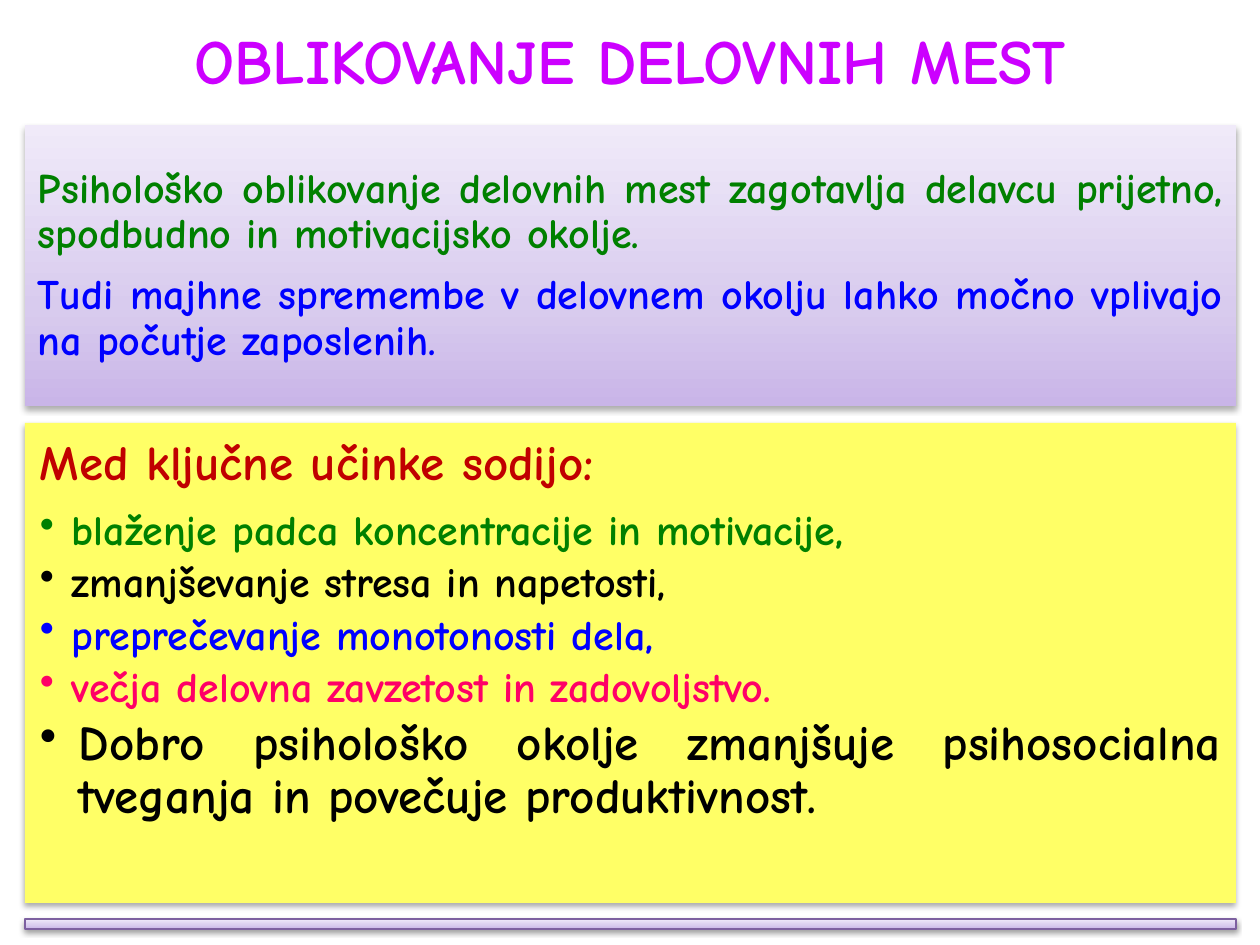
from dataclasses import dataclass

import pptx
import pptx.dml.color
import pptx.enum.shapes
import pptx.enum.text
import pptx.oxml
import pptx.oxml.ns
import pptx.util

RGBColor = pptx.dml.color.RGBColor
Align = pptx.enum.text.PP_ALIGN
Anchor = pptx.enum.text.MSO_ANCHOR

PX = 914400 / 126
FONT = "Comic Neue"
MAGENTA = RGBColor(0xCC, 0x00, 0xFF)
GREEN = RGBColor(0x00, 0x80, 0x00)
BLUE = RGBColor(0x00, 0x00, 0xFF)
DARK_RED = RGBColor(0xC0, 0x00, 0x00)
PINK = RGBColor(0xFF, 0x00, 0x66)
BLACK = RGBColor(0x00, 0x00, 0x00)
YELLOW = RGBColor(0xFF, 0xFF, 0x66)
PURPLE = RGBColor(0x7D, 0x60, 0xA0)
LILAC_STOPS = (
    (0, RGBColor(0xC9, 0xB5, 0xE8)),
    (35, RGBColor(0xD8, 0xCB, 0xEE)),
    (100, RGBColor(0xF0, 0xEA, 0xF9)),
)


@dataclass(frozen=True)
class Panel:
    top: int
    height: int
    fill: RGBColor | None = None  # None gives the lilac gradient
    line: RGBColor | None = None
    shadow_opacity: int = 32
    shadow_blur: float = 3.5
    shadow_distance: float = 2.2


@dataclass(frozen=True)
class Bullet:
    text: str
    color: RGBColor
    size: int = 24
    indent: int = 32
    align: Align = Align.LEFT


INTRODUCTION = Panel(125, 281)
EFFECTS = Panel(423, 480, fill=YELLOW)
FOOTER = Panel(919, 10, line=PURPLE, shadow_opacity=38,
               shadow_blur=3.1, shadow_distance=1.6)

BULLETS = (
    Bullet("blaženje padca koncentracije in motivacije,", GREEN),
    Bullet("zmanjševanje stresa in napetosti,", BLACK),
    Bullet("preprečevanje monotonosti dela,", BLUE),
    Bullet("večja delovna zavzetost in zadovoljstvo.", PINK),
    Bullet("Dobro psihološko okolje zmanjšuje psihosocialna tveganja "
           "in povečuje produktivnost.", BLACK, 28, 39, Align.JUSTIFY),
)


def px(length: int) -> int:
    return round(length * PX)


def xml(text: str):
    namespace = pptx.oxml.ns.nsdecls("a")
    return pptx.oxml.parse_xml(text.replace(" ", f" {namespace} ", 1))


def fill_gradient(shape) -> None:
    shape.fill.gradient()
    shape.fill.gradient_angle = 90
    stops = shape._element.spPr.find(".//" + pptx.oxml.ns.qn("a:gsLst"))
    for stop in list(stops):
        stops.remove(stop)
    for position, color in LILAC_STOPS:
        stops.append(xml(f'<a:gs pos="{position * 1000}">'
                         f'<a:srgbClr val="{color}"/></a:gs>'))


def draw_panel(slide, panel: Panel):
    shape = slide.shapes.add_shape(
        pptx.enum.shapes.MSO_SHAPE.RECTANGLE,
        px(25), px(panel.top), px(1211), px(panel.height))
    if panel.fill is None:
        fill_gradient(shape)
    else:
        shape.fill.solid()
        shape.fill.fore_color.rgb = panel.fill
    if panel.line is None:
        shape.line.fill.background()
    else:
        shape.line.color.rgb = panel.line
        shape.line.width = pptx.util.Pt(0.75)

    # Soft shadow falling straight down
    shape.shadow.inherit = False
    effects = shape._element.spPr.find(pptx.oxml.ns.qn("a:effectLst"))
    effects.append(xml(
        f'<a:outerShdw blurRad="{pptx.util.Pt(panel.shadow_blur)}" '
        f'dist="{pptx.util.Pt(panel.shadow_distance)}" dir="5400000" '
        f'rotWithShape="0"><a:srgbClr val="000000">'
        f'<a:alpha val="{panel.shadow_opacity * 1000}"/>'
        f'</a:srgbClr></a:outerShdw>'))
    return shape


def prepare_frame(shape, margin: int, anchor: Anchor):
    frame = shape.text_frame
    frame.word_wrap = True
    frame.vertical_anchor = anchor
    frame.margin_left = frame.margin_right = px(margin)
    frame.margin_top = frame.margin_bottom = px(margin)
    return frame


def write(frame, text: str, *, size: int, color: RGBColor,
          align: Align = Align.LEFT, line_spacing: float = 0.9,
          space_after: float = 0, indent: int = 0) -> None:
    """Add a paragraph; a positive indent gives it a hanging bullet."""
    first = frame.paragraphs[0]
    paragraph = frame.add_paragraph() if first.runs else first
    paragraph.alignment = align
    paragraph.line_spacing = line_spacing
    paragraph.space_after = pptx.util.Pt(space_after)
    if indent:
        properties = paragraph._p.get_or_add_pPr()
        properties.set("marL", str(px(indent)))
        properties.set("indent", str(-px(indent)))
        properties.append(xml('<a:buChar char="•"/>'))
    run = paragraph.add_run()
    run.text = text
    run.font.name = FONT
    run.font.size = pptx.util.Pt(size)
    run.font.bold = True
    run.font.color.rgb = color


def main() -> None:
    presentation = pptx.Presentation()
    presentation.slide_width = px(1260)
    presentation.slide_height = px(945)
    slide = presentation.slides.add_slide(presentation.slide_layouts[6])

    # Title
    title = slide.shapes.add_textbox(px(15), px(16), px(1230), px(100))
    write(prepare_frame(title, 6, Anchor.TOP), "OBLIKOVANJE DELOVNIH MEST",
          size=36, color=MAGENTA, align=Align.CENTER, line_spacing=1.0)

    # Introduction
    frame = prepare_frame(draw_panel(slide, INTRODUCTION), 13, Anchor.MIDDLE)
    for text, color in (
        ("Psihološko oblikovanje delovnih mest zagotavlja delavcu prijetno, "
         "spodbudno in motivacijsko okolje.", GREEN),
        ("Tudi majhne spremembe v delovnem okolju lahko močno vplivajo "
         "na počutje zaposlenih.", BLUE),
    ):
        write(frame, text, size=24, color=color, align=Align.JUSTIFY,
              space_after=9)

    # Key effects
    frame = prepare_frame(draw_panel(slide, EFFECTS), 15, Anchor.TOP)
    write(frame, "Med ključne učinke sodijo:", size=28, color=DARK_RED,
          space_after=10.5)
    for bullet in BULLETS:
        write(frame, bullet.text, size=bullet.size, color=bullet.color,
              align=bullet.align, space_after=4, indent=bullet.indent)

    # Footer bar
    draw_panel(slide, FOOTER)

    presentation.save("out.pptx")


if __name__ == "__main__":
    main()
